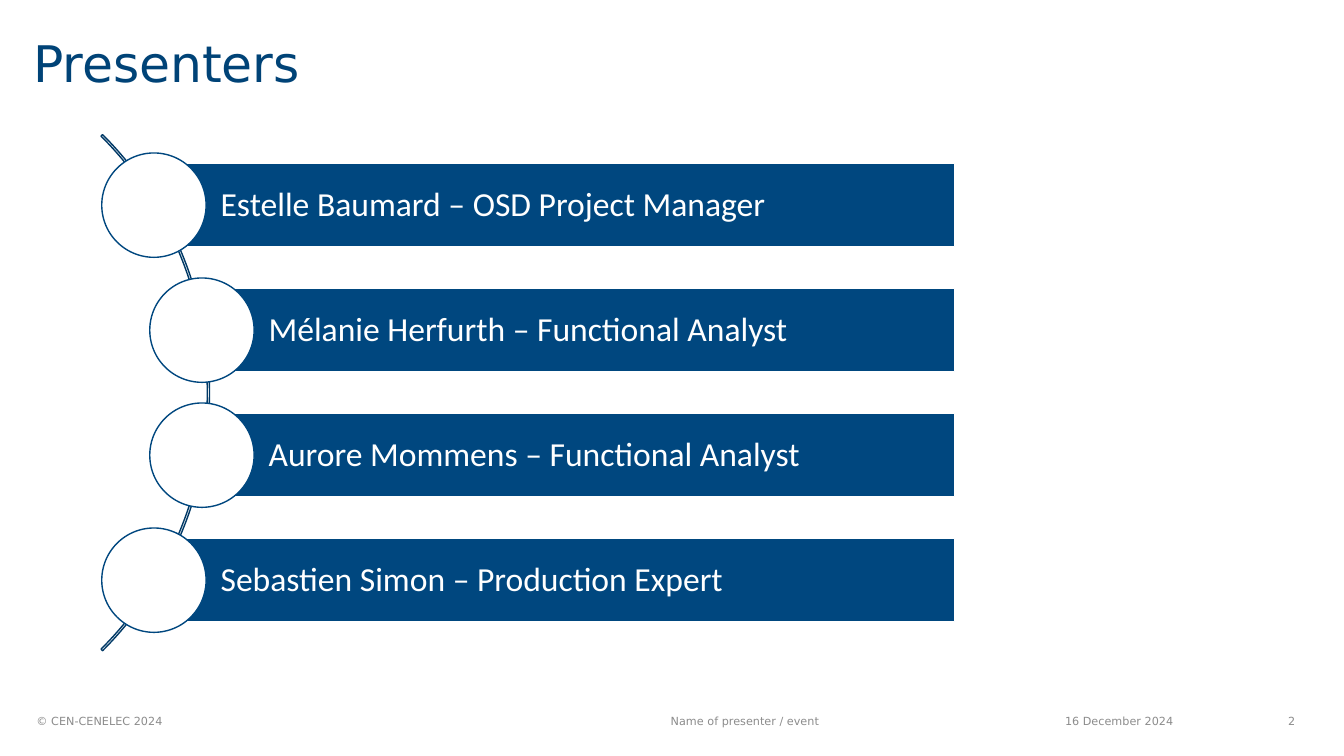
from pptx import Presentation
from pptx.dml.color import RGBColor
from pptx.enum.shapes import MSO_SHAPE as Shape
from pptx.enum.text import MSO_ANCHOR as Anchor, PP_ALIGN as Align
from pptx.util import Cm, Pt

# Content
TITLE = "Presenters"
PRESENTERS = [  # text, left edge of the bar in cm
    ("Estelle Baumard – OSD Project Manager", 3.88),
    ("Mélanie Herfurth – Functional Analyst", 5.09),
    ("Aurore Mommens – Functional Analyst", 5.09),
    ("Sebastien Simon – Production Expert", 3.88),
]
FOOTER = [  # text, left and width in cm, alignment, left inset in cm
    ("© CEN-CENELEC 2024", 0.58, 4.34, Align.LEFT, 0.34),
    ("Name of presenter / event", 11.23, 15.09, Align.CENTER, 0.25),
    ("16 December 2024", 26.59, 3.76, Align.LEFT, 0.25),
    ("2", 30.63, 2.26, Align.RIGHT, 0.25),
]

# Style
TITLE_BLUE = RGBColor(0x00, 0x43, 0x77)
BAR_BLUE = RGBColor(0x00, 0x47, 0x7F)
ARC_BLUE = RGBColor(0x00, 0x39, 0x66)
GREY = RGBColor(0x8C, 0x8C, 0x8C)
WHITE = RGBColor(0xFF, 0xFF, 0xFF)

# Geometry in cm
FIRST_CENTRE, PITCH = 5.17, 3.15
BAR_RIGHT, BAR_HEIGHT = 24.05, 2.1
CIRCLE, ARC = 2.63, 18.39


def style_text(frame, font_name, size, colour, align=Align.LEFT):
    frame.word_wrap = True
    frame.vertical_anchor = Anchor.MIDDLE
    paragraph = frame.paragraphs[0]
    paragraph.alignment = align
    font = paragraph.runs[0].font
    font.name, font.size = font_name, Pt(size)
    font.color.rgb = colour
    return paragraph


def add_outlined(kind, left, top, width, height, fill, line):
    shape = slide.shapes.add_shape(kind, Cm(left), Cm(top), Cm(width), Cm(height))
    shape.shadow.inherit = False
    if fill is None:
        shape.fill.background()
    else:
        shape.fill.solid()
        shape.fill.fore_color.rgb = fill
    shape.line.color.rgb = line
    shape.line.width = Pt(1)
    return shape


prs = Presentation()
prs.slide_width, prs.slide_height = Cm(33.87), Cm(19.05)
slide = prs.slides.add_slide(prs.slide_layouts[5])

# Title
title = slide.shapes.title
title.left, title.top, title.width, title.height = Cm(0.58), Cm(0.61), Cm(25.37), Cm(2.13)
title.text_frame.text = TITLE
style_text(title.text_frame, "DejaVu Sans", 36, TITLE_BLUE).line_spacing = 0.9

# Footer
for text, left, width, align, inset in FOOTER:
    box = slide.shapes.add_textbox(Cm(left), Cm(17.65), Cm(width), Cm(1.02))
    box.text_frame.text = text
    box.text_frame.margin_left = Cm(inset)
    style_text(box.text_frame, "DejaVu Sans", 8, GREY, align)

# Arc behind the circles, centred on the rows
middle = FIRST_CENTRE + PITCH * (len(PRESENTERS) - 1) / 2
arc = add_outlined(Shape.BLOCK_ARC, -13.11, middle - ARC / 2, ARC, ARC, None, ARC_BLUE)
for index, value in enumerate((189, 27, 0.003)):  # from 315° to 45°, thin band
    arc.adjustments[index] = value

# One bar per presenter, with a circle centred on its left edge
for row, (text, left) in enumerate(PRESENTERS):
    centre = FIRST_CENTRE + row * PITCH
    bar = add_outlined(Shape.RECTANGLE, left, centre - BAR_HEIGHT / 2,
                       BAR_RIGHT - left, BAR_HEIGHT, BAR_BLUE, WHITE)
    frame = bar.text_frame
    frame.text = text
    frame.margin_left = Cm(1.68)
    frame.margin_right = frame.margin_top = frame.margin_bottom = Cm(0.18)
    style_text(frame, "Calibri", 24, WHITE).line_spacing = 0.9
    add_outlined(Shape.OVAL, left - CIRCLE / 2, centre - CIRCLE / 2,
                 CIRCLE, CIRCLE, WHITE, BAR_BLUE)

prs.save("out.pptx")
